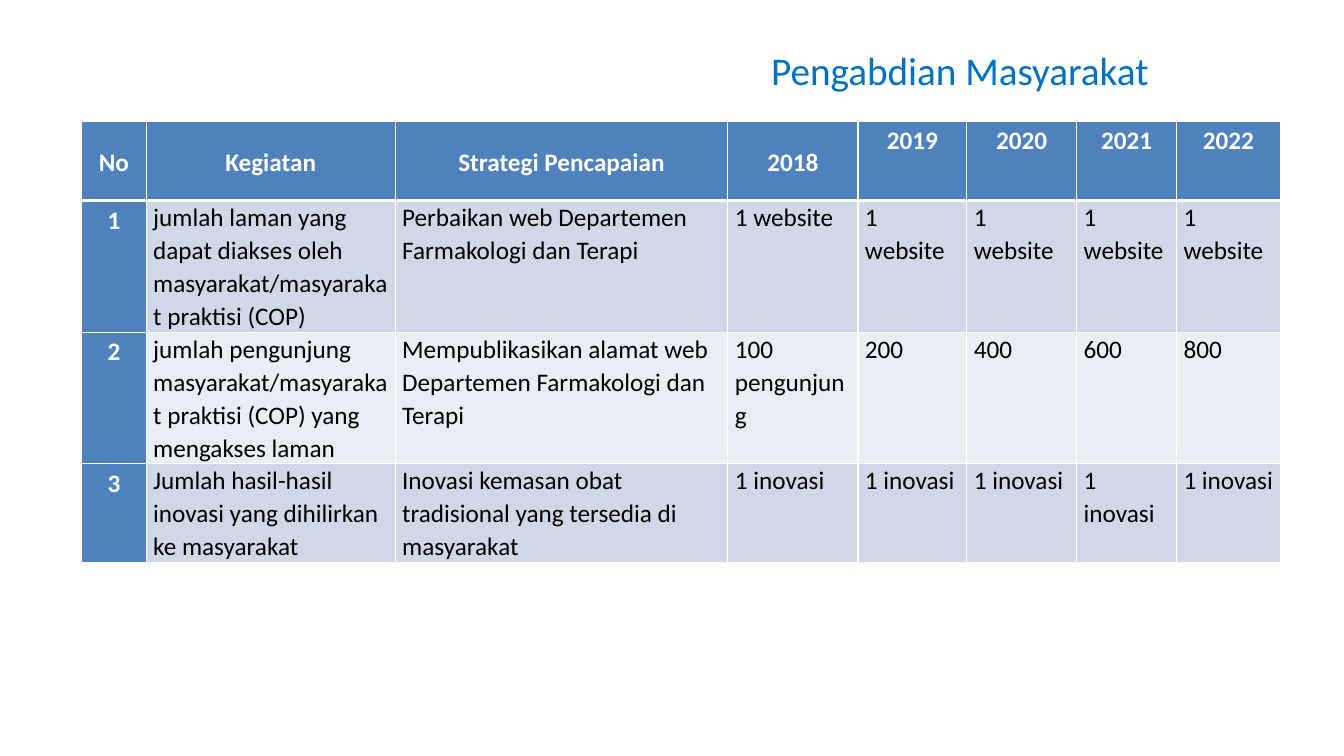
from lxml import etree
from pptx import Presentation
from pptx.dml.color import RGBColor
from pptx.enum.text import MSO_ANCHOR, PP_ALIGN
from pptx.oxml.ns import qn
from pptx.util import Inches, Pt

CENTER, LEFT = PP_ALIGN.CENTER, PP_ALIGN.LEFT
TOP, MIDDLE = MSO_ANCHOR.TOP, MSO_ANCHOR.MIDDLE

WHITE, BLACK, BLUE, TITLE_BLUE = "FFFFFF", "000000", "4F81BD", "0070C0"
BANDS = ["D0D8E8", "E9EDF4"]
COL_WIDTHS = [0.64, 2.47, 3.3, 1.29, 1.08, 1.09, 0.99, 1.03]
ROW_HEIGHTS = [0.79, 1.28, 1.28, 0.96]

HEADING = {"alignment": CENTER, "line_spacing": 1.15}
BODY = {"alignment": LEFT, "line_spacing": 1.07, "space_after": Pt(8)}

ROWS = [
    ["No", "Kegiatan", "Strategi Pencapaian", "2018", "2019", "2020", "2021", "2022"],
    ["1", "jumlah laman yang dapat diakses oleh masyarakat/masyarakat praktisi (COP)",
     "Perbaikan web Departemen Farmakologi dan Terapi"] + ["1 website"] * 5,
    ["2", "jumlah pengunjung masyarakat/masyarakat praktisi (COP) yang mengakses laman",
     "Mempublikasikan alamat web Departemen Farmakologi dan Terapi",
     "100 pengunjung", "200", "400", "600", "800"],
    ["3", "Jumlah hasil-hasil inovasi yang dihilirkan ke masyarakat",
     "Inovasi kemasan obat tradisional yang tersedia di masyarakat"] + ["1 inovasi"] * 5,
]


def rgb(value):
    return RGBColor.from_string(value)


def write(tf, text, size, color, bold=False, layout=None):
    p = tf.paragraphs[0]
    for name, value in (layout or {}).items():
        setattr(p, name, value)
    r = p.add_run()
    r.text = text
    for name, value in {"size": Pt(size), "name": "Calibri", "bold": bold}.items():
        setattr(r.font, name, value)
    r.font.color.rgb = rgb(color)


def add_title(s, text):
    box = s.shapes.add_textbox(Inches(7.55), Inches(0.41), Inches(4.32), Inches(0.57))
    box.text_frame.word_wrap = True
    write(box.text_frame, text, 28, TITLE_BLUE)


def set_borders(cell, widths):
    """Draw white cell borders; border lines precede the fill in the XML."""
    tc_pr = cell._tc.get_or_add_tcPr()
    for i, (side, width) in enumerate(widths.items()):
        ln = etree.Element(qn("a:ln" + side), w=str(Pt(width)))
        fill = etree.SubElement(ln, qn("a:solidFill"))
        etree.SubElement(fill, qn("a:srgbClr"), val=WHITE)
        tc_pr.insert(i, ln)


def format_cell(cell, text, row, col):
    heading = row == 0 or col == 0
    settings = {
        "margin_left": Inches(0.07), "margin_right": Inches(0.07),
        "margin_top": 0, "margin_bottom": 0,
        "vertical_anchor": MIDDLE if row == 0 and col < 4 else TOP,
    }
    for name, value in settings.items():
        setattr(cell, name, value)
    cell.fill.solid()
    cell.fill.fore_color.rgb = rgb(BLUE if heading else BANDS[(row - 1) % 2])
    set_borders(cell, {"L": 1, "R": 1,
                       "T": 3 if row == 1 else 1,
                       "B": 3 if row == 0 else 1})
    write(cell.text_frame, text, 18, WHITE if heading else BLACK, heading,
          HEADING if heading else BODY)


def add_plan_table(s):
    table = s.shapes.add_table(
        len(ROWS), len(COL_WIDTHS), Inches(0.81), Inches(1.2),
        Inches(sum(COL_WIDTHS)), Inches(sum(ROW_HEIGHTS))).table
    table.horz_banding = False
    for column, width in zip(table.columns, COL_WIDTHS):
        column.width = Inches(width)
    for row, height in zip(table.rows, ROW_HEIGHTS):
        row.height = Inches(height)
    for row, texts in enumerate(ROWS):
        for col, text in enumerate(texts):
            format_cell(table.cell(row, col), text, row, col)


def main():
    prs = Presentation()
    prs.slide_width, prs.slide_height = Inches(13.33), Inches(7.5)
    s = prs.slides.add_slide(prs.slide_layouts[6])
    # Activity plan by year
    add_plan_table(s)
    # Title
    add_title(s, "Pengabdian Masyarakat")
    prs.save("out.pptx")


if __name__ == "__main__":
    main()
